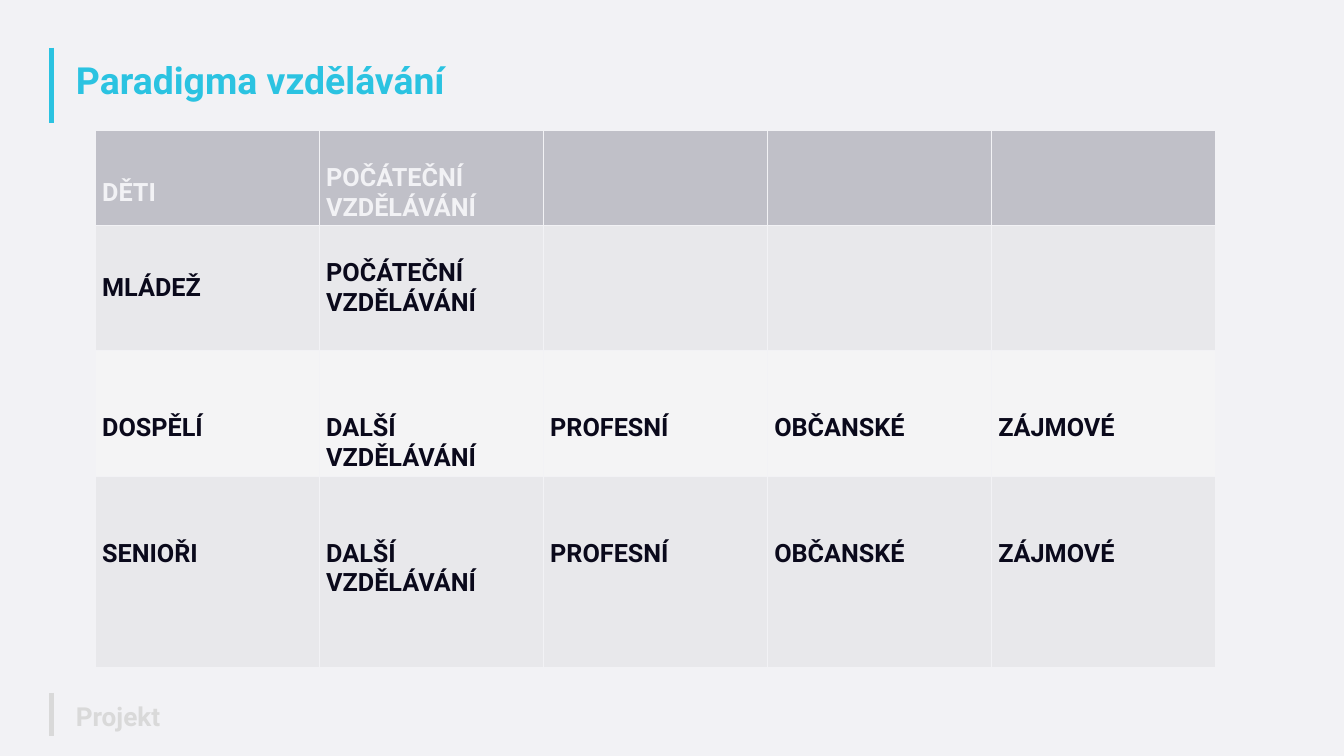
from typing import NamedTuple

from lxml.etree import SubElement
from pptx import Presentation
from pptx.dml.color import RGBColor
from pptx.enum.shapes import MSO_CONNECTOR
from pptx.enum.text import MSO_ANCHOR, MSO_AUTO_SIZE, PP_ALIGN
from pptx.oxml.ns import qn
from pptx.util import Inches, Pt

WIDTH, HEIGHT = Inches(20), Inches(11.25)
FONT = "Roboto"
BACKGROUND, ACCENT, MUTED, DARK = "F2F2F5", "2BC3E1", "D9D9D9", "0A091B"
TITLE_SIZE, BODY_SIZE, FOOTER_SIZE = 40, 27, 28
MARGIN_X, MARGIN_BOTTOM = Inches(0.1), Inches(0.03)
COLUMN_SHARE = 16.67


class Bar(NamedTuple):
    top: float
    bottom: float
    color: str


class Row(NamedTuple):
    height: float
    fill: str
    text_color: str
    first_offset: float  # inches above the text of the first cell
    other_offset: float  # inches above the text of the other cells
    texts: list[str]


BARS = [Bar(6.31, 16.27, ACCENT), Bar(91.64, 97.42, MUTED)]
INITIAL = "POČÁTEČNÍ VZDĚLÁVÁNÍ"
FURTHER = ["DALŠÍ VZDĚLÁVÁNÍ", "PROFESNÍ", "OBČANSKÉ", "ZÁJMOVÉ"]
ROWS = [
    Row(12.44, "C0C0C8", BACKGROUND, 0.7, 0.48, ["DĚTI", INITIAL, "", "", ""]),
    Row(16.53, "E8E8EB", DARK, 0.7, 0.49, ["MLÁDEŽ", INITIAL, "", "", ""]),
    Row(16.71, "F4F4F5", DARK, 0.93, 0.93, ["DOSPĚLÍ", *FURTHER]),
    Row(25.16, "E8E8EB", DARK, 0.92, 0.92, ["SENIOŘI", *FURTHER]),
]


def across(percent: float) -> int:
    return round(WIDTH * percent / 100)


def down(percent: float) -> int:
    return round(HEIGHT * percent / 100)


def color(value: str) -> RGBColor:
    return RGBColor.from_string(value)


def write(text_frame, text: str, size: float, text_color: str) -> None:
    text_frame.text = text
    text_frame.word_wrap = True
    paragraph = text_frame.paragraphs[0]
    paragraph.alignment = PP_ALIGN.LEFT
    for run in paragraph.runs:
        run.font.name = FONT
        run.font.size = Pt(size)
        run.font.bold = True
        run.font.color.rgb = color(text_color)


def draw_bar(slide, bar: Bar) -> None:
    x = across(3.85)
    line = slide.shapes.add_connector(
        MSO_CONNECTOR.STRAIGHT, x, down(bar.top), x, down(bar.bottom))
    line.line.color.rgb = color(bar.color)
    line.line.width = Pt(5)
    SubElement(line._element.spPr, qn("a:effectLst"))


def add_borders(cell) -> None:
    properties = cell._tc.get_or_add_tcPr()
    for index, side in enumerate(("lnL", "lnR", "lnT", "lnB")):
        border = properties.makeelement(qn(f"a:{side}"), {"w": str(Pt(1))})
        fill = SubElement(border, qn("a:solidFill"))
        SubElement(fill, qn("a:srgbClr"), val=BACKGROUND)
        properties.insert(index, border)


def draw_table(slide, rows: list[Row]) -> None:
    columns = len(rows[0].texts)
    table = slide.shapes.add_table(
        len(rows), columns, across(7.1), down(17.3),
        across(COLUMN_SHARE * columns), down(sum(row.height for row in rows))).table
    for column in table.columns:
        column.width = across(COLUMN_SHARE)
    for row_index, row in enumerate(rows):
        table.rows[row_index].height = down(row.height)
        for column_index, text in enumerate(row.texts):
            cell = table.cell(row_index, column_index)
            cell.fill.solid()
            cell.fill.fore_color.rgb = color(row.fill)
            cell.margin_left = cell.margin_right = MARGIN_X
            cell.margin_bottom = MARGIN_BOTTOM
            offset = row.other_offset if column_index else row.first_offset
            cell.margin_top = Inches(offset if text else 0.05)
            cell.vertical_anchor = MSO_ANCHOR.TOP
            write(cell.text_frame, text, BODY_SIZE, row.text_color)
            add_borders(cell)


def draw_title(slide, text: str) -> None:
    title = slide.shapes.title
    title.left, title.top = across(5.15), down(7.7)
    title.width, title.height = across(90.25), down(6.31)
    write(title.text_frame, text, TITLE_SIZE, ACCENT)
    title.text_frame.auto_size = MSO_AUTO_SIZE.NONE
    title.text_frame.vertical_anchor = MSO_ANCHOR.MIDDLE
    title.text_frame.paragraphs[0].line_spacing = 0.9


def draw_footer(slide, text: str) -> None:
    footer = slide.shapes.add_textbox(
        across(5.15), down(91.5), across(30), down(6.31))
    write(footer.text_frame, text, FOOTER_SIZE, MUTED)
    footer.text_frame.vertical_anchor = MSO_ANCHOR.MIDDLE


def main() -> None:
    presentation = Presentation()
    presentation.slide_width, presentation.slide_height = WIDTH, HEIGHT
    slide = presentation.slides.add_slide(presentation.slide_layouts[5])
    slide.background.fill.solid()
    slide.background.fill.fore_color.rgb = color(BACKGROUND)
    for bar in BARS:
        draw_bar(slide, bar)
    draw_footer(slide, "Projekt")
    draw_title(slide, "Paradigma vzdělávání")
    draw_table(slide, ROWS)
    presentation.save("out.pptx")


if __name__ == "__main__":
    main()
